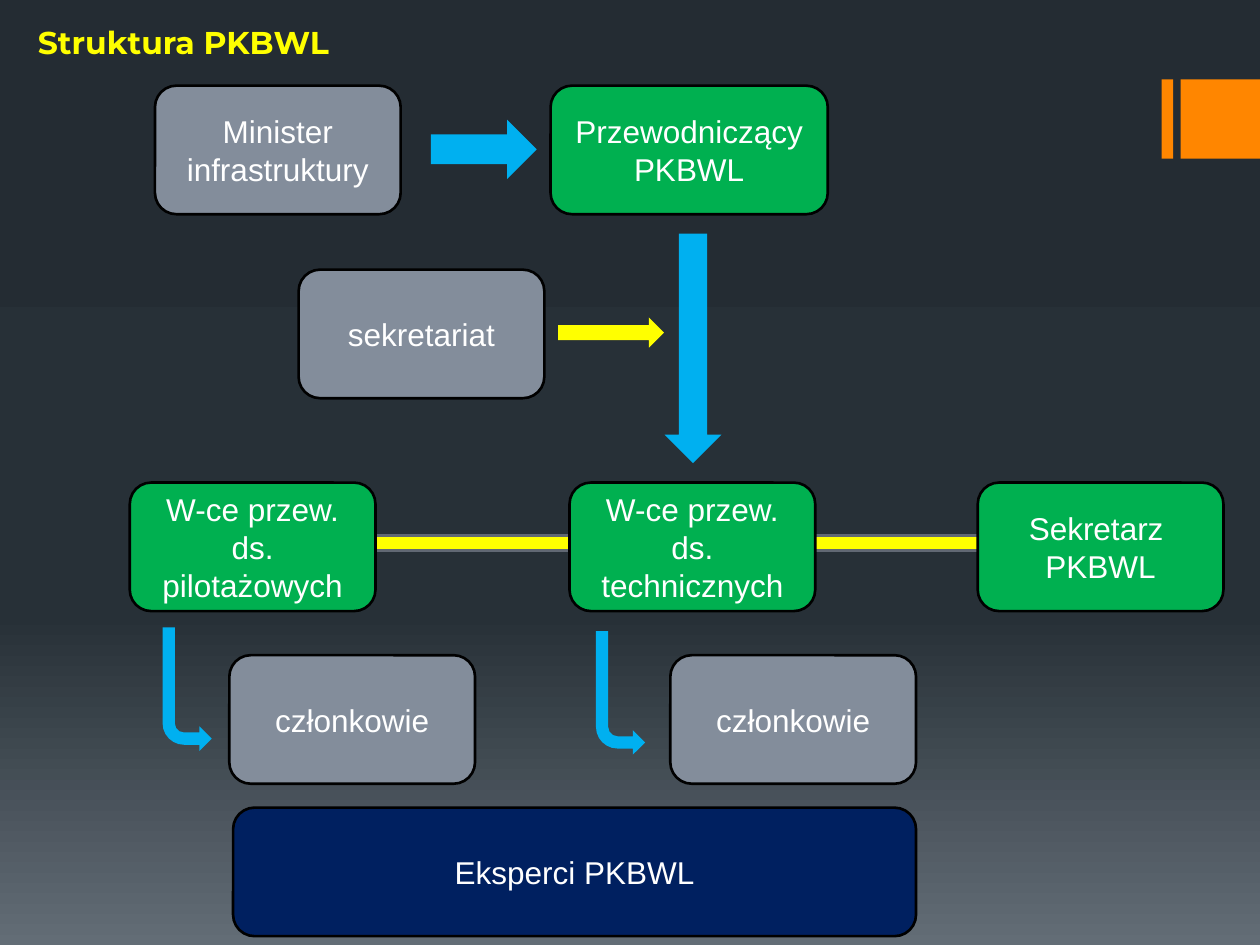
"""Build the PKBWL organisation chart slide."""
from copy import deepcopy

from pptx import Presentation
from pptx import util as u
from pptx.dml.color import RGBColor
from pptx.enum import shapes, text
from pptx.oxml.ns import qn

WHITE = RGBColor(0xFF, 0xFF, 0xFF)
BLACK = RGBColor(0x00, 0x00, 0x00)
YELLOW = RGBColor(0xFF, 0xFF, 0x00)
ORANGE = RGBColor(0xFF, 0x86, 0x00)
BLUE = RGBColor(0x00, 0xB0, 0xF0)
NAVY = RGBColor(0x00, 0x20, 0x60)
GREEN = RGBColor(0x00, 0xB0, 0x50)
GREY = RGBColor(0x83, 0x8D, 0x9B)
BAR_EDGE = RGBColor(0x61, 0x68, 0x73)
SKY = [(0, RGBColor(0x24, 0x2C, 0x33)), (0.65, RGBColor(0x27, 0x30, 0x37)),
       (1, RGBColor(0x63, 0x6D, 0x76))]

KIND = shapes.MSO_SHAPE
BOX_W, BOX_H = 1.95, 1.02
LEADERS, OFFICE, DEPUTIES, MEMBERS, EXPERTS = 0.68, 2.14, 3.83, 5.2, 6.41

BOXES = [
    ("Minister\ninfrastruktury", 1.23, LEADERS, BOX_W, GREY),
    ("Przewodniczący\nPKBWL", 4.37, LEADERS, 2.2, GREEN),
    ("sekretariat", 2.37, OFFICE, BOX_W, GREY),
    ("W-ce przew.\nds. pilotażowych", 1.03, DEPUTIES, BOX_W, GREEN),
    ("W-ce przew.\nds. technicznych", 4.52, DEPUTIES, BOX_W, GREEN),
    ("Sekretarz \nPKBWL", 7.76, DEPUTIES, BOX_W, GREEN),
    ("członkowie", 1.82, MEMBERS, BOX_W, GREY),
    ("członkowie", 5.32, MEMBERS, BOX_W, GREY),
    ("Eksperci PKBWL", 1.85, EXPERTS, 5.42, NAVY),
]
ARROWS = [
    (3.42, 0.95, 0.84, 0.47, BLUE, 0),
    (4.59, 2.54, 1.82, 0.45, BLUE, 90),
    (4.43, 2.52, 0.84, 0.24, YELLOW, 0),
]
BENT_ARROWS = [(1.29, 4.98), (4.73, 5.01)]
ACCENTS = [(9.22, 0.09), (9.37, 0.63)]


def add_block(slide, kind, place, fill, edge=None):
    block = slide.shapes.add_shape(kind, *map(u.Inches, place))
    block.shadow.inherit = False
    block.fill.solid()
    block.fill.fore_color.rgb = fill
    if edge is None:
        block.line.fill.background()
    else:
        block.line.color.rgb = edge
        block.line.width = u.Pt(1.5)
    return block


def write(frame, words, font_name, color, align, bold=False):
    frame.text = words
    frame.word_wrap = True
    for paragraph in frame.paragraphs:
        paragraph.alignment = align
        for run in paragraph.runs:
            run.font.name = font_name
            run.font.size = u.Pt(18)
            run.font.bold = bold
            run.font.color.rgb = color


def paint_background(slide):
    fill = slide.background.fill
    fill.gradient()
    fill.gradient_angle = 270
    first = next(slide.element.iter(qn("a:gs")))
    first.addnext(deepcopy(first))
    for stop, (position, color) in zip(fill.gradient_stops, SKY):
        stop.position = position
        stop.color.rgb = color


def main():
    deck = Presentation()
    deck.slide_width, deck.slide_height = u.Inches(10), u.Inches(7.5)
    slide = deck.slides.add_slide(deck.slide_layouts[5])
    paint_background(slide)

    title = slide.shapes.title
    title.left, title.top, title.width, title.height = map(u.Inches, (0.2, 0.13, 6.1, 0.4))
    write(title.text_frame, "Struktura PKBWL", "Montserrat", YELLOW, text.PP_ALIGN.LEFT, True)
    title.text_frame.vertical_anchor = text.MSO_ANCHOR.TOP
    title.text_frame.auto_size = text.MSO_AUTO_SIZE.SHAPE_TO_FIT_TEXT

    for left, width in ACCENTS:
        add_block(slide, KIND.RECTANGLE, (left, 0.63, width, 0.63), ORANGE)
    add_block(slide, KIND.RECTANGLE, (1.51, 4.25, 7.53, 0.12), YELLOW, BAR_EDGE)

    for words, left, top, width, fill in BOXES:
        box = add_block(slide, KIND.ROUNDED_RECTANGLE, (left, top, width, BOX_H), fill, BLACK)
        write(box.text_frame, words, "Arial", WHITE, text.PP_ALIGN.CENTER)
        box.text_frame.vertical_anchor = text.MSO_ANCHOR.MIDDLE

    for *place, fill, turn in ARROWS:
        add_block(slide, KIND.RIGHT_ARROW, place, fill).rotation = turn
    for left, top in BENT_ARROWS:
        bend = add_block(slide, KIND.BENT_ARROW, (left, top, 0.39, 0.98), BLUE)
        bend.element.spPr.find(qn("a:xfrm")).set("flipV", "1")

    deck.save("out.pptx")


if __name__ == "__main__":
    main()
